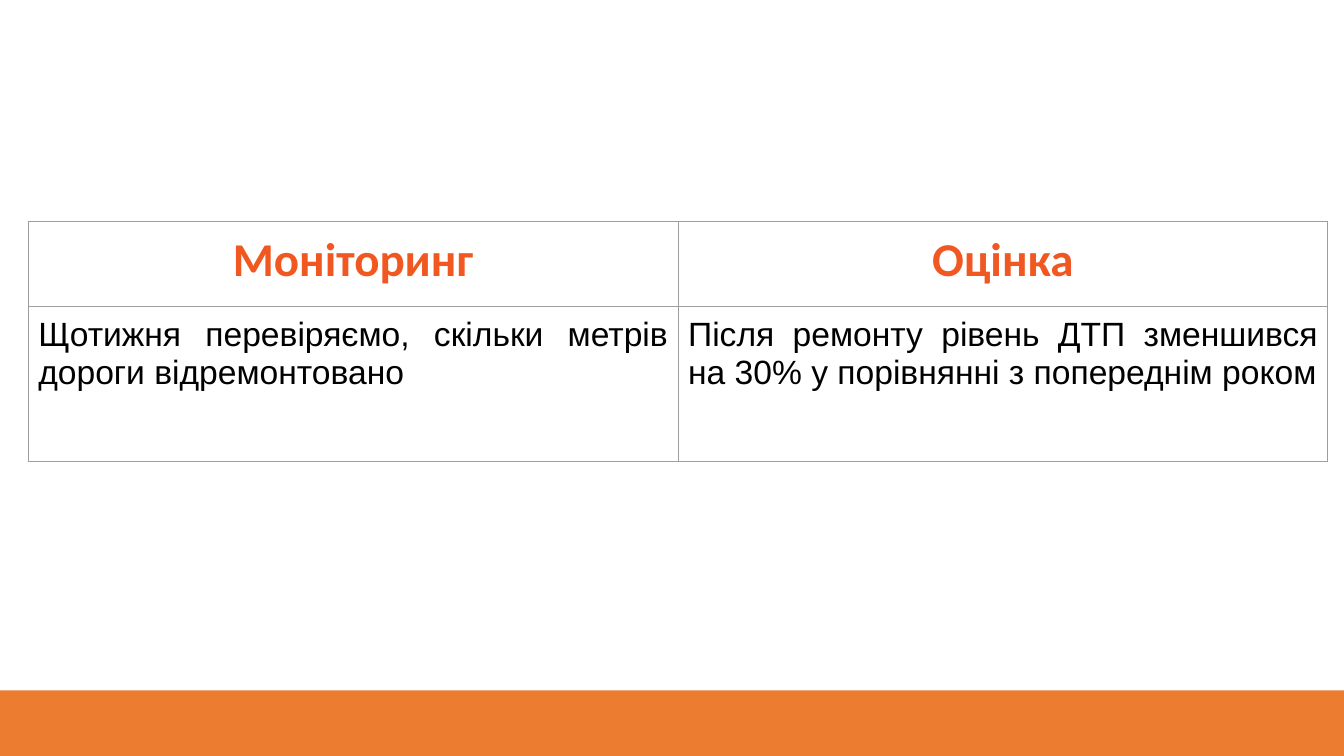
import pptx
import pptx.util
import pptx.dml.color
import pptx.enum.shapes
import pptx.enum.text
import lxml.etree
from pptx.oxml.ns import qn

Inches = pptx.util.Inches
Align = pptx.enum.text.PP_ALIGN

COLORS = {"band": "EC7C30", "heading": "F15821", "body": "000000", "border": "9E9E9E"}
ROWS = [
    ["Моніторинг", "Оцінка"],
    ["Щотижня перевіряємо, скільки метрів дороги відремонтовано",
     "Після ремонту рівень ДТП зменшився на 30% у порівнянні з попереднім роком"],
]
STYLES = [
    {"font": "Calibri", "size": 33.6, "bold": True, "color": "heading", "align": Align.CENTER},
    {"font": "Arial", "size": 24, "bold": False, "color": "body", "align": Align.JUSTIFY},
]
ROW_HEIGHTS = [0.84, 1.54]
TABLE_LEFT, TABLE_TOP, TABLE_WIDTH = 0.28, 2.2, 12.89
PAGE_WIDTH, PAGE_HEIGHT, BAND_HEIGHT = 13.33, 7.5, 0.65
CELL_MARGIN, BORDER_WIDTH = 0.1, 0.75


def rgb(name):
    return pptx.dml.color.RGBColor.from_string(COLORS[name])


def add_borders(cell):
    properties = cell._tc.get_or_add_tcPr()
    for position, side in enumerate(("a:lnL", "a:lnR", "a:lnT", "a:lnB")):
        line = lxml.etree.Element(qn(side), w=str(pptx.util.Pt(BORDER_WIDTH)))
        fill = lxml.etree.SubElement(line, qn("a:solidFill"))
        lxml.etree.SubElement(fill, qn("a:srgbClr"), val=COLORS["border"])
        properties.insert(position, line)


def fill_cell(cell, text, style):
    cell.fill.background()
    cell.margin_left = cell.margin_right = Inches(CELL_MARGIN)
    cell.margin_top = cell.margin_bottom = Inches(CELL_MARGIN)
    cell.text = text
    para = cell.text_frame.paragraphs[0]
    para.alignment = style["align"]
    para.font.name = style["font"]
    para.font.size = pptx.util.Pt(style["size"])
    para.font.bold = style["bold"]
    para.font.color.rgb = rgb(style["color"])
    add_borders(cell)


def add_band(page):
    band = page.shapes.add_shape(
        pptx.enum.shapes.MSO_SHAPE.RECTANGLE,
        0, Inches(PAGE_HEIGHT - BAND_HEIGHT), Inches(PAGE_WIDTH), Inches(BAND_HEIGHT))
    band.shadow.inherit = False
    band.fill.solid()
    band.fill.fore_color.rgb = rgb("band")
    band.line.fill.background()


def add_comparison(page):
    table = page.shapes.add_table(
        len(ROWS), len(ROWS[0]), Inches(TABLE_LEFT), Inches(TABLE_TOP),
        Inches(TABLE_WIDTH), Inches(sum(ROW_HEIGHTS))).table
    table.first_row = table.horz_banding = False
    for column in table.columns:
        column.width = Inches(TABLE_WIDTH / len(ROWS[0]))
    for row, height, texts, style in zip(table.rows, ROW_HEIGHTS, ROWS, STYLES):
        row.height = Inches(height)
        for cell, text in zip(row.cells, texts):
            fill_cell(cell, text, style)


def main():
    deck = pptx.Presentation()
    deck.slide_width = Inches(PAGE_WIDTH)
    deck.slide_height = Inches(PAGE_HEIGHT)
    page = deck.slides.add_slide(deck.slide_layouts[6])
    add_band(page)
    add_comparison(page)
    deck.save("out.pptx")


if __name__ == "__main__":
    main()
